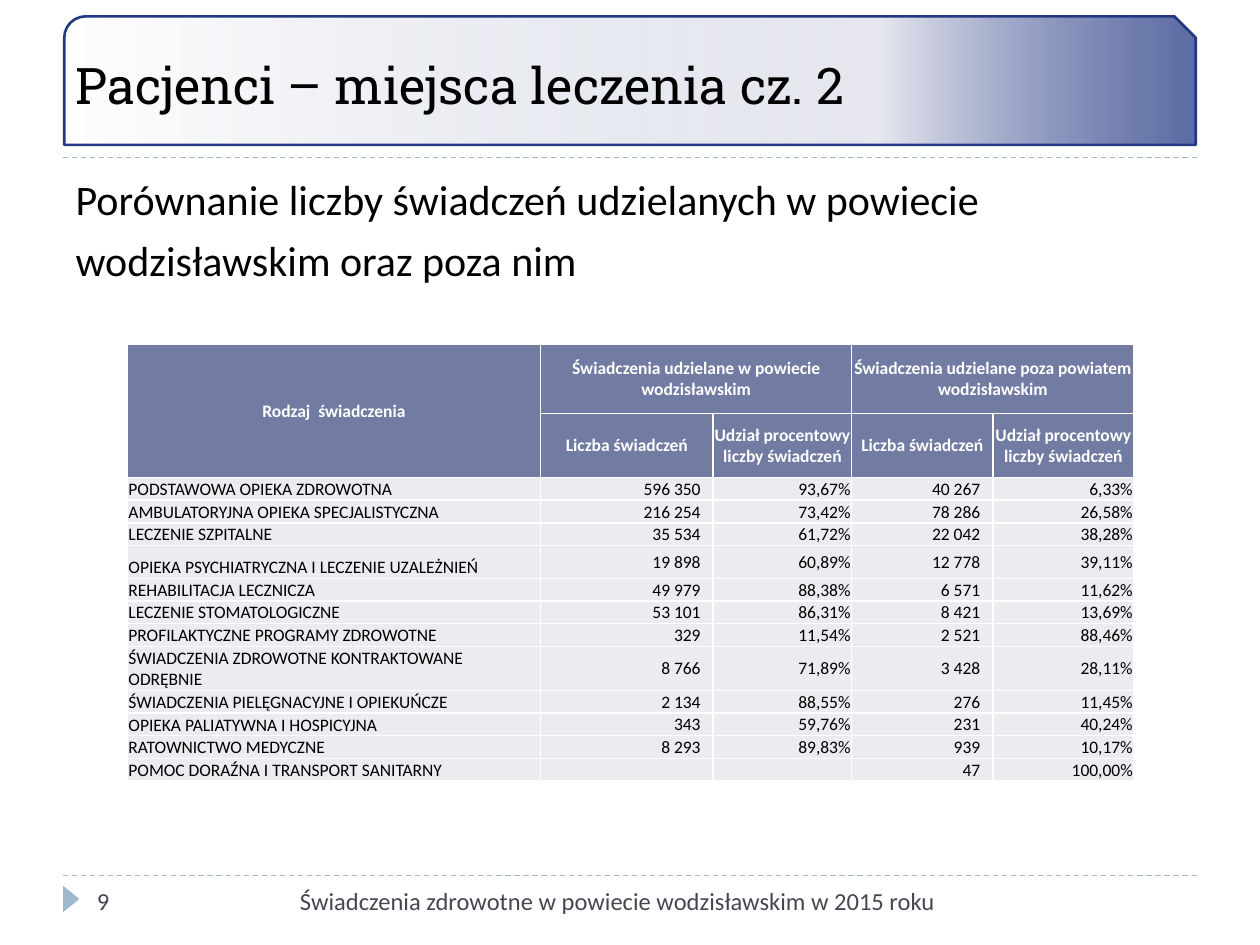
from lxml.etree import SubElement
from pptx import Presentation
from pptx.dml.color import RGBColor
from pptx.enum.dml import MSO_LINE
from pptx.enum.shapes import MSO_CONNECTOR, MSO_SHAPE
from pptx.enum.text import MSO_ANCHOR, MSO_AUTO_SIZE, PP_ALIGN
from pptx.oxml import parse_xml
from pptx.oxml.ns import nsdecls, qn
from pptx.util import Inches, Pt

TITLE = "Pacjenci – miejsca leczenia cz. 2"
BODY = ["Porównanie liczby świadczeń udzielanych w powiecie", "wodzisławskim oraz poza nim"]
PAGE_NUMBER = "9"
FOOTER = "Świadczenia zdrowotne w powiecie wodzisławskim w 2015 roku"

COUNT, SHARE = "Liczba świadczeń", "Udział procentowy liczby świadczeń"
HEADER = [
    ("Rodzaj  świadczenia", "Świadczenia udzielane w powiecie wodzisławskim", "",
     "Świadczenia udzielane poza powiatem wodzisławskim", ""),
    ("", COUNT, SHARE, COUNT, SHARE),
]
SERVICES = [
    ("PODSTAWOWA OPIEKA ZDROWOTNA", "596 350", "93,67%", "40 267", "6,33%"),
    ("AMBULATORYJNA OPIEKA SPECJALISTYCZNA", "216 254", "73,42%", "78 286", "26,58%"),
    ("LECZENIE SZPITALNE", "35 534", "61,72%", "22 042", "38,28%"),
    ("OPIEKA PSYCHIATRYCZNA I LECZENIE UZALEŻNIEŃ", "19 898", "60,89%", "12 778", "39,11%"),
    ("REHABILITACJA LECZNICZA", "49 979", "88,38%", "6 571", "11,62%"),
    ("LECZENIE STOMATOLOGICZNE", "53 101", "86,31%", "8 421", "13,69%"),
    ("PROFILAKTYCZNE PROGRAMY ZDROWOTNE", "329", "11,54%", "2 521", "88,46%"),
    ("ŚWIADCZENIA ZDROWOTNE KONTRAKTOWANE ODRĘBNIE", "8 766", "71,89%", "3 428", "28,11%"),
    ("ŚWIADCZENIA PIELĘGNACYJNE I OPIEKUŃCZE", "2 134", "88,55%", "276", "11,45%"),
    ("OPIEKA PALIATYWNA I HOSPICYJNA", "343", "59,76%", "231", "40,24%"),
    ("RATOWNICTWO MEDYCZNE", "8 293", "89,83%", "939", "10,17%"),
    ("POMOC DORAŹNA I TRANSPORT SANITARNY", "", "", "47", "100,00%"),
]
COLUMN_WIDTHS = [3.28, 1.37, 1.1, 1.12, 1.12]
HEADER_HEIGHTS = [0.55, 0.51]
SERVICE_HEIGHT = 0.18
TALL_SERVICES = {3: 0.26, 7: 0.35}
MERGES = [((0, 0), (1, 0)), ((0, 1), (0, 2)), ((0, 3), (0, 4))]
COUNT_COLUMNS = (1, 3)

BLACK, WHITE, GREY = "000000", "FFFFFF", "464653"
NAVY, LIGHT_BLUE, HEADER_FILL, ROW_FILL = "233883", "9FB8CD", "727CA3", "EBECF0"
GRADIENT = [(0, NAVY, 73), (28, "E6E7EF", 100), (100, "CCD0E0", 0)]


def color(hex_value):
    return RGBColor.from_string(hex_value)


def format_text(text_frame, size, hex_value, font="Calibri", bold=False, align=PP_ALIGN.LEFT):
    for paragraph in text_frame.paragraphs:
        paragraph.alignment = align
        for run in paragraph.runs:
            run.font.size = Pt(size)
            run.font.name = font
            run.font.bold = bold
            run.font.color.rgb = color(hex_value)


def place(shape, left, top, width, height):
    shape.left, shape.top = Inches(left), Inches(top)
    shape.width, shape.height = Inches(width), Inches(height)


def add_divider(slide, y):
    line = slide.shapes.add_connector(
        MSO_CONNECTOR.STRAIGHT, Inches(0.5), Inches(y), Inches(9.5), Inches(y))
    line.line.color.rgb = color(LIGHT_BLUE)
    line.line.width = Pt(0.75)
    line.line.dash_style = MSO_LINE.DASH
    SubElement(line._element.spPr, qn("a:effectLst"))


def add_marker(slide):
    marker = slide.shapes.add_shape(
        MSO_SHAPE.ISOSCELES_TRIANGLE, Inches(0.46), Inches(7.07), Inches(0.21), Inches(0.13))
    marker.rotation = 90
    marker.shadow.inherit = False
    marker.fill.solid()
    marker.fill.fore_color.rgb = color(LIGHT_BLUE)
    marker.line.fill.background()


def add_banner(slide):
    """Add the title frame, whose gradient fades out towards the left."""
    banner = slide.shapes.add_shape(
        MSO_SHAPE.SNIP_ROUND_RECTANGLE, Inches(0.51), Inches(0.13), Inches(8.98), Inches(1.02))
    banner.shadow.inherit = False
    banner.line.color.rgb = color(NAVY)
    banner.line.width = Pt(1.5)
    stops = "".join(
        f'<a:gs pos="{position * 1000}"><a:srgbClr val="{hex_value}">'
        f'<a:alpha val="{alpha * 1000}"/></a:srgbClr></a:gs>'
        for position, hex_value, alpha in GRADIENT)
    gradient = parse_xml(
        f'<a:gradFill {nsdecls("a")} rotWithShape="1"><a:gsLst>{stops}</a:gsLst>'
        '<a:lin ang="10800000" scaled="0"/></a:gradFill>')
    banner._element.spPr.find(qn("a:prstGeom")).addnext(gradient)


def fill_title(slide):
    title = slide.shapes.title
    place(title, 0.5, 0.52, 9, 0.71)
    frame = title.text_frame
    frame.text = TITLE
    frame.auto_size = MSO_AUTO_SIZE.NONE
    frame.vertical_anchor = MSO_ANCHOR.BOTTOM
    frame.margin_bottom = Inches(0.32)
    format_text(frame, 28.8, BLACK, "Roboto Slab")
    slide.shapes._spTree.append(title._element)  # in front of the banner


def fill_body(slide):
    body = slide.placeholders[1]
    place(body, 0.5, 1.33, 9, 5.4)
    frame = body.text_frame
    frame.text = "\n".join(BODY)
    frame.auto_size = MSO_AUTO_SIZE.NONE
    format_text(frame, 24, BLACK)
    for paragraph in frame.paragraphs:
        paragraph.space_before = Pt(6)
        properties = paragraph._p.get_or_add_pPr()
        properties.set("marL", "0")
        properties.set("indent", "0")
        SubElement(properties, qn("a:buNone"))


def add_note(slide, text, left, width, align):
    box = slide.shapes.add_textbox(Inches(left), Inches(6.98), Inches(width), Inches(0.4))
    box.text_frame.word_wrap = True
    box.text_frame.text = text
    format_text(box.text_frame, 14, GREY, align=align)


def add_borders(cell):
    for side in ("lnL", "lnR", "lnT", "lnB"):
        cell._tc.get_or_add_tcPr().append(parse_xml(
            f'<a:{side} {nsdecls("a")} w="12700"><a:solidFill><a:srgbClr val="{WHITE}"/>'
            f'</a:solidFill></a:{side}>'))


def fill_cell(cell, text, row, column):
    is_header = row < len(HEADER)
    cell.margin_left = cell.margin_right = cell.margin_top = Inches(0.01)
    cell.margin_bottom = 0
    cell.vertical_anchor = MSO_ANCHOR.MIDDLE
    add_borders(cell)
    cell.fill.solid()
    cell.fill.fore_color.rgb = color(HEADER_FILL if is_header else ROW_FILL)
    align = PP_ALIGN.CENTER if is_header else PP_ALIGN.RIGHT
    if not is_header and column == 0:
        align = PP_ALIGN.LEFT
        cell.vertical_anchor = MSO_ANCHOR.BOTTOM
    elif not is_header and column in COUNT_COLUMNS:
        cell.margin_right = Inches(0.1)
    if text:
        cell.text_frame.text = text
        format_text(cell.text_frame, 10, WHITE if is_header else BLACK,
                    bold=is_header, align=align)
    else:
        SubElement(cell.text_frame.paragraphs[0]._p, qn("a:endParaRPr"), sz="1000")


def add_services_table(slide):
    rows = HEADER + SERVICES
    heights = HEADER_HEIGHTS + [
        TALL_SERVICES.get(index, SERVICE_HEIGHT) for index in range(len(SERVICES))]
    table = slide.shapes.add_table(
        len(rows), len(COLUMN_WIDTHS), Inches(1.01), Inches(2.73),
        Inches(sum(COLUMN_WIDTHS)), Inches(sum(heights))).table
    for column, width in zip(table.columns, COLUMN_WIDTHS):
        column.width = Inches(width)
    for row, height in zip(table.rows, heights):
        row.height = Inches(height)
    for row, texts in enumerate(rows):
        for column, text in enumerate(texts):
            fill_cell(table.cell(row, column), text, row, column)
    for first, last in MERGES:
        table.cell(*first).merge(table.cell(*last))


def main():
    presentation = Presentation()
    presentation.slide_width, presentation.slide_height = Inches(10), Inches(7.5)
    slide = presentation.slides.add_slide(presentation.slide_layouts[1])
    for y in (6.95, 1.25):
        add_divider(slide, y)
    add_marker(slide)
    fill_body(slide)
    add_banner(slide)
    add_note(slide, PAGE_NUMBER, 0.67, 2.17, PP_ALIGN.LEFT)
    fill_title(slide)
    add_note(slide, FOOTER, 2.17, 5.35, PP_ALIGN.RIGHT)
    add_services_table(slide)
    presentation.save("out.pptx")


if __name__ == "__main__":
    main()
